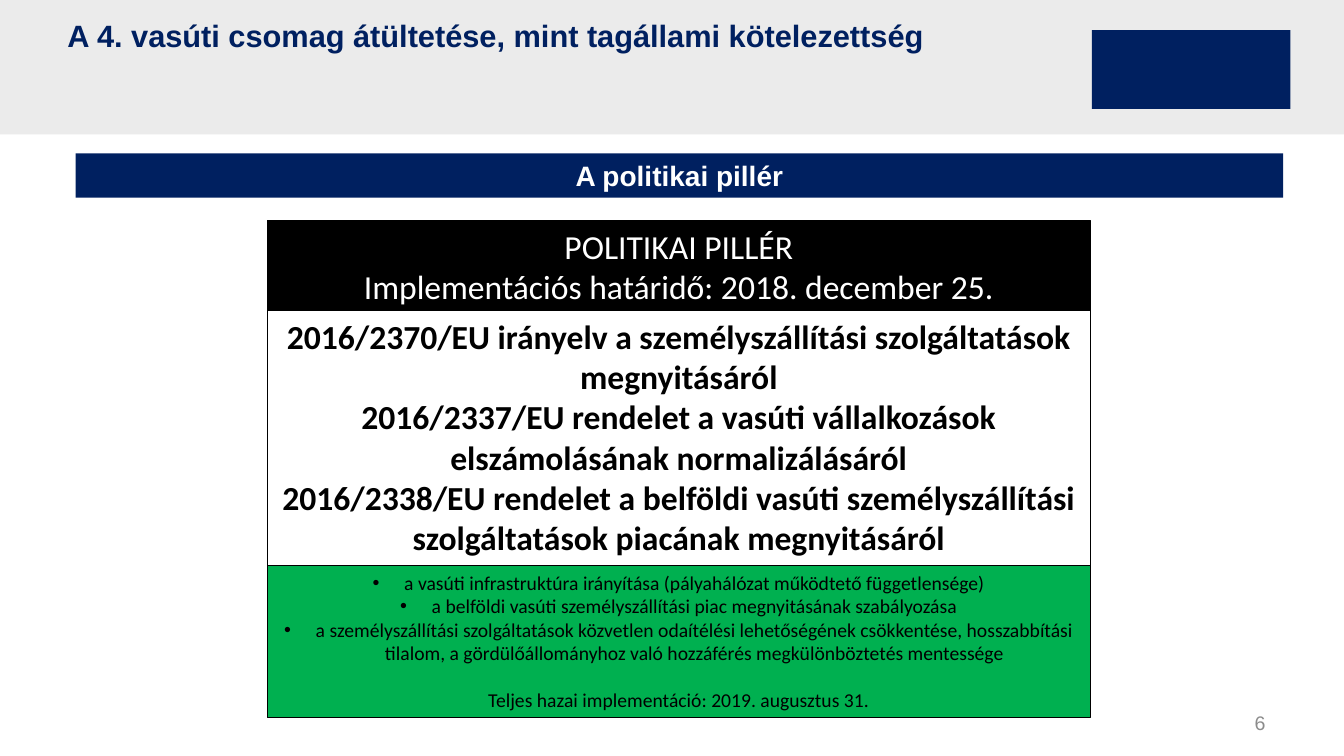
"""Build the slide on the political pillar of the fourth railway package."""
from lxml import etree
from pptx import Presentation
from pptx.dml.color import RGBColor
from pptx.enum.shapes import MSO_SHAPE as SHAPE
from pptx.enum.text import MSO_ANCHOR as ANCHOR, MSO_AUTO_SIZE as AUTO, PP_ALIGN as ALIGN
from pptx.oxml.ns import qn
from pptx.util import Pt

NAVY, WHITE, BLACK = "002060", "FFFFFF", "000000"
WIDTH, HEIGHT = 960, 540
TITLE = "A 4. vasúti csomag átültetése, mint tagállami kötelezettség"
BANNER = "A politikai pillér"
PAGE = "6"
DEADLINE = ["POLITIKAI PILLÉR", "Implementációs határidő: 2018. december 25."]
LAWS = [
    "2016/2370/EU irányelv a személyszállítási szolgáltatások megnyitásáról",
    "2016/2337/EU rendelet a vasúti vállalkozások elszámolásának normalizálásáról",
    "2016/2338/EU rendelet a belföldi vasúti személyszállítási szolgáltatások "
    "piacának megnyitásáról",
]
TOPICS = [
    "a vasúti infrastruktúra irányítása (pályahálózat működtető függetlensége)",
    "a belföldi vasúti személyszállítási piac megnyitásának szabályozása",
    "a személyszállítási szolgáltatások közvetlen odaítélési lehetőségének csökkentése, "
    "hosszabbítási tilalom, a gördülőállományhoz való hozzáférés megkülönböztetés mentessége",
]
COMPLETION = "Teljes hazai implementáció: 2019. augusztus 31."
PANELS = [
    (64.2, BLACK, DEADLINE, 24, WHITE, False),
    (182, None, LAWS, 24, BLACK, True),
    (108.7, "00B050", TOPICS + [COMPLETION], 14, BLACK, False),
]
PANEL_LEFT, PANEL_TOP, PANEL_WIDTH = 190.8, 157.7, 588.2


def rgb(value):
    return RGBColor.from_string(value)


def add_box(s, left, top, width, height, fill=None, line=None):
    sp = s.shapes.add_shape(SHAPE.RECTANGLE, Pt(left), Pt(top), Pt(width), Pt(height))
    sp.shadow.inherit = False
    if fill:
        sp.fill.solid()
        sp.fill.fore_color.rgb = rgb(fill)
    else:
        sp.fill.background()
    if line:
        sp.line.color.rgb = rgb(line)
        sp.line.width = Pt(0.75)
    else:
        sp.line.fill.background()
    return sp


def write(sp, lines, size, color, font="Arial", bold=False,
          align=ALIGN.CENTER, anchor=ANCHOR.TOP, inset=None):
    tf = sp.text_frame
    tf.text = "\n".join(lines)
    tf.word_wrap = True
    tf.auto_size = AUTO.NONE
    tf.vertical_anchor = anchor
    if inset is not None:
        tf.margin_left = tf.margin_right = tf.margin_top = tf.margin_bottom = Pt(inset)
    for p in tf.paragraphs:
        p.alignment = align
        for r in p.runs:
            r.font.name, r.font.size, r.font.bold = font, Pt(size), bold
            r.font.color.rgb = rgb(color)
    return tf.paragraphs


def add_bullet(p):
    props = p._p.get_or_add_pPr()
    props.set("marL", str(Pt(22.5)))
    props.set("indent", str(-Pt(22.5)))
    etree.SubElement(props, qn("a:buFont")).set("typeface", "Arial")
    etree.SubElement(props, qn("a:buChar")).set("char", "•")


def main():
    prs = Presentation()
    prs.slide_width, prs.slide_height = Pt(WIDTH), Pt(HEIGHT)
    s = prs.slides.add_slide(prs.slide_layouts[5])

    title = s.shapes.title
    title.left, title.top, title.width, title.height = Pt(48.2), Pt(12.2), Pt(752.4), Pt(72)
    write(title, [TITLE], 22, NAVY, bold=True, align=ALIGN.LEFT, inset=0)
    header = add_box(s, 0, 0, WIDTH, 96, "EBEBEB")
    title.element.addprevious(header.element)
    add_box(s, 780, 21.6, 141.8, 56.2, NAVY)

    banner = add_box(s, 54, 109.6, 862.6, 31.6, NAVY)
    write(banner, [BANNER], 20, WHITE, bold=True)

    top = PANEL_TOP
    for height, fill, lines, size, color, bold in PANELS:
        panel = add_box(s, PANEL_LEFT, top, PANEL_WIDTH, height, fill, BLACK)
        paragraphs = write(panel, lines, size, color, "Calibri", bold)
        top += height
    *topics, completion = paragraphs
    for p in topics:
        add_bullet(p)
    completion.space_before = Pt(17)

    number = s.shapes.add_textbox(Pt(888), Pt(504), Pt(24), Pt(24))
    write(number, [PAGE], 14, "8C8C8C", anchor=ANCHOR.MIDDLE, inset=0)
    prs.save("out.pptx")


if __name__ == "__main__":
    main()
